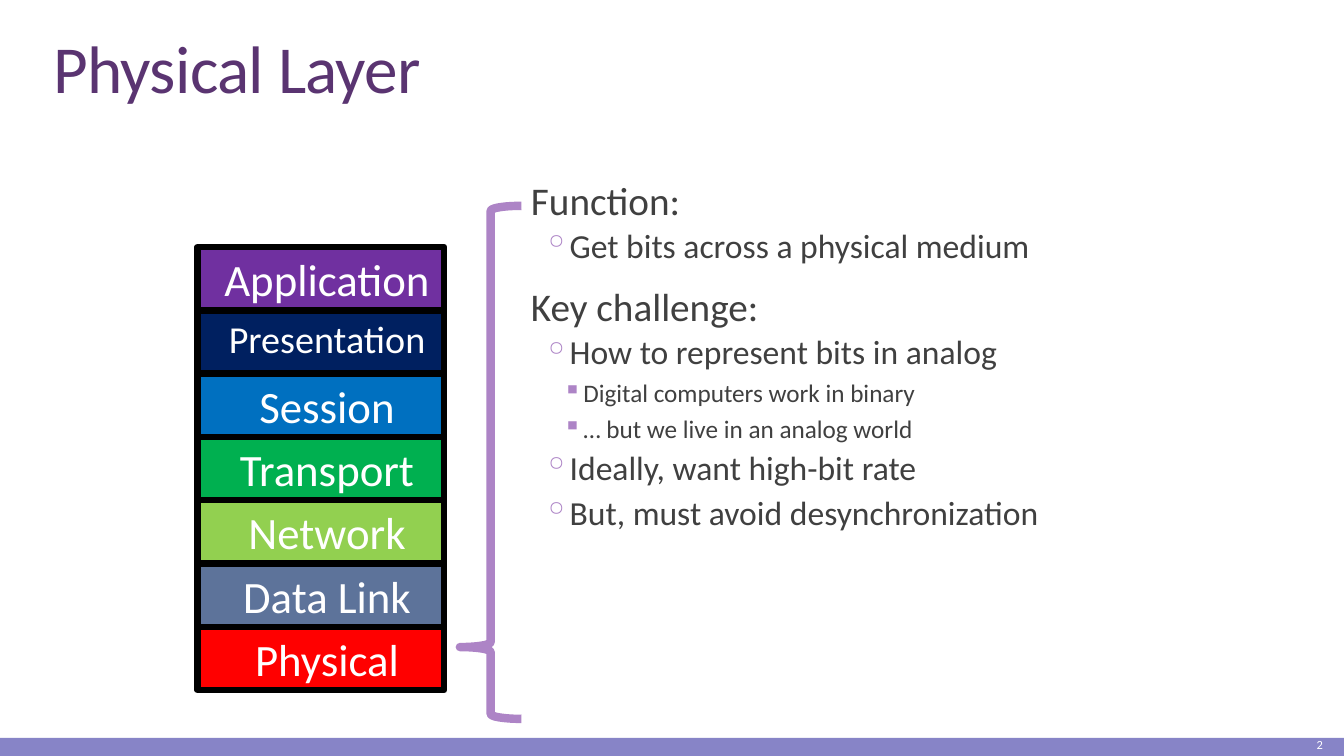
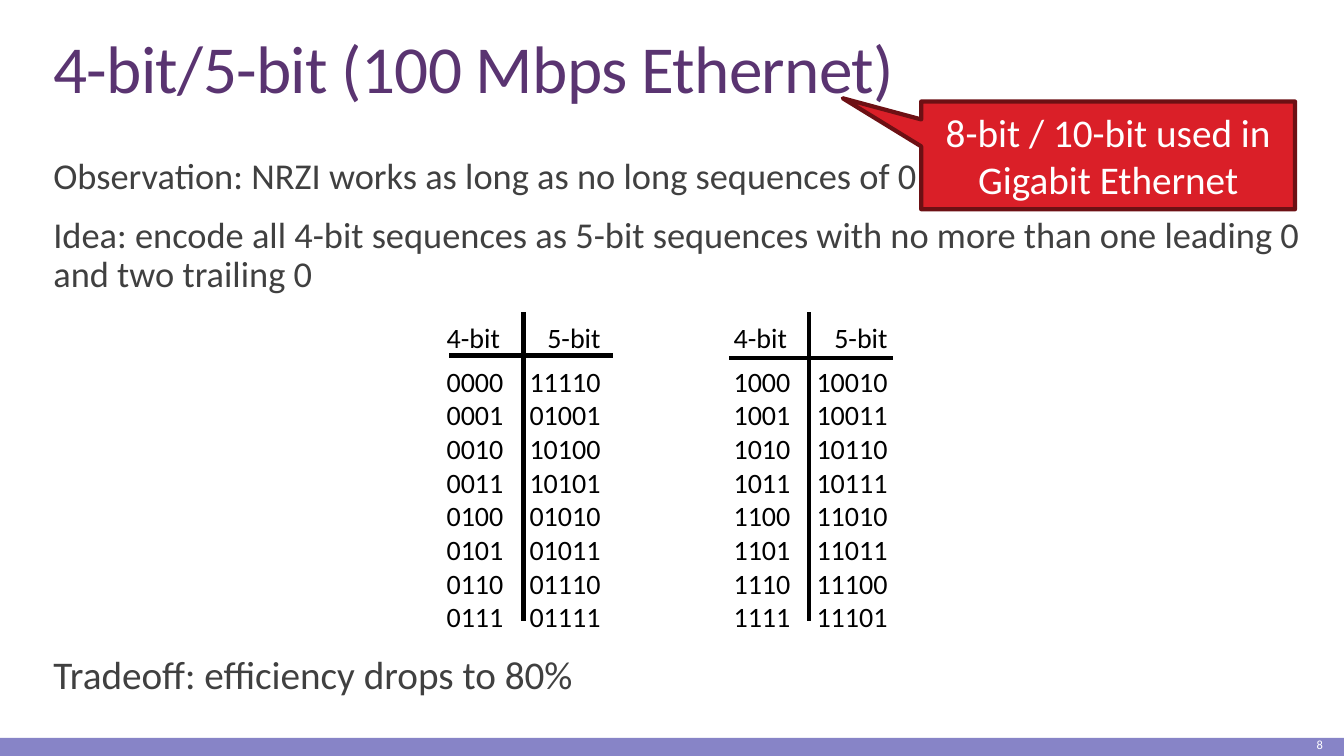
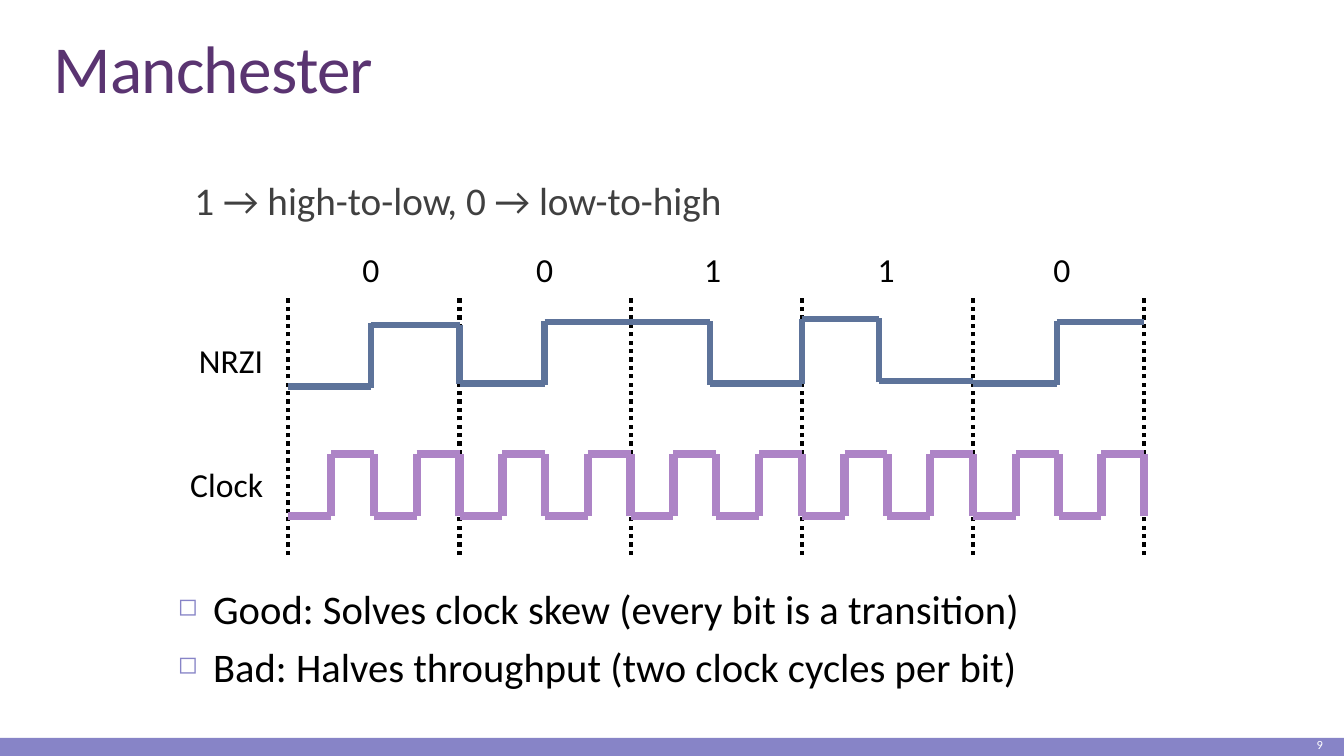
"""Build three slides on the physical layer, 4-bit/5-bit and Manchester coding."""
from collections import namedtuple

from lxml.etree import SubElement
from pptx import Presentation
from pptx.dml.color import RGBColor
from pptx.enum.dml import MSO_LINE as Dash
from pptx.enum.shapes import MSO_CONNECTOR as Wire, MSO_SHAPE as Form
from pptx.enum.text import MSO_ANCHOR as Anchor, MSO_AUTO_SIZE as Fit, PP_ALIGN as Align
from pptx.oxml.ns import qn
from pptx.util import Pt

rgb = RGBColor.from_string
FONT = "Calibri"
BLACK, WHITE, GRAY = "000000", "FFFFFF", "404040"
PLUM, LILAC, BAND, STEEL = "5A3471", "AD84C6", "8784C7", "5D739A"

Style = namedtuple(
    "Style", "size hue line before after left hang mark tint scale",
    defaults=(BLACK, 1, 0, 0, 0, 0, None, LILAC, 100))
HEAD = Style(28, GRAY, 0.9, 12, 2)
LEAD = HEAD._replace(size=26)
ITEM = Style(24, GRAY, 0.9, 2, 4, 23, 14.4, "◦")
SUB = ITEM._replace(size=18, left=37.4, mark="▪")
POINT = Style(29, before=7, left=25.2, hang=25.2, mark="◻", tint=BAND, scale=60)
TITLE = Style(48, PLUM, 0.85)
PAGE = Style(8.9, WHITE)
LABEL = Style(24)
CELL = Style(20)


def write(frame, rows, align=Align.LEFT):
    frame.word_wrap = True
    for i, (text, style) in enumerate(rows):
        para = frame.add_paragraph() if i else frame.paragraphs[0]
        para.text = text
        para.alignment = align
        para.line_spacing = style.line
        para.space_before = Pt(style.before if i else 0)
        para.space_after = Pt(style.after)
        if style.mark:
            prop = para._p.get_or_add_pPr()
            prop.set("marL", str(Pt(style.left)))
            prop.set("indent", str(-Pt(style.hang)))
            tint = SubElement(prop, qn("a:buClr"))
            SubElement(tint, qn("a:srgbClr"), val=style.tint)
            SubElement(prop, qn("a:buSzPct"), val=str(style.scale * 1000))
            SubElement(prop, qn("a:buChar"), char=style.mark)
        para.font.name = FONT
        para.font.size = Pt(style.size)
        para.font.color.rgb = rgb(style.hue)


def draw(slide, x1, y1, x2, y2, hue, width):
    wire = slide.shapes.add_connector(Wire.STRAIGHT, *map(Pt, (x1, y1, x2, y2)))
    wire.line.color.rgb = rgb(hue)
    wire.line.width = Pt(width)
    SubElement(wire._element.spPr, qn("a:effectLst"))
    return wire


deck = Presentation()
deck.slide_width, deck.slide_height = Pt(960), Pt(540)
plain = deck.slide_layouts[5]
slides = []
for name, page in (("Physical Layer", 2), ("4-bit/5-bit (100 Mbps Ethernet)", 8),
                   ("Manchester", 9)):
    slide = deck.slides.add_slide(plain)
    slides.append(slide)
    band = slide.shapes.add_shape(Form.RECTANGLE, 0, Pt(527), Pt(960), Pt(13))
    band.shadow.inherit = False
    band.fill.solid()
    band.fill.fore_color.rgb = rgb(BAND)
    band.line.fill.background()
    title = slide.shapes.title
    title.left, title.top, title.width, title.height = map(Pt, (31, 22.3, 910, 57.6))
    frame = title.text_frame
    frame.vertical_anchor = Anchor.BOTTOM
    frame.auto_size = Fit.NONE
    write(frame, [(name, TITLE)])
    frame.paragraphs[0].font._element.set("spc", "-50")
    frame = slide.shapes.add_textbox(*map(Pt, (849, 524, 103, 16))).text_frame
    frame.vertical_anchor = Anchor.MIDDLE
    write(frame, [(str(page), PAGE)], Align.RIGHT)
stack, code, wave = slides

body = stack.shapes.add_textbox(*map(Pt, (372.2, 126, 467, 402))).text_frame
write(body, [
    ("Function:", HEAD),
    ("Get bits across a physical medium", ITEM),
    ("Key challenge:", HEAD),
    ("How to represent bits in analog", ITEM),
    ("Digital computers work in binary", SUB),
    ("… but we live in an analog world", SUB),
    ("Ideally, want high-bit rate", ITEM),
    ("But, must avoid desynchronization", ITEM),
])
layers = [("Application", "7030A0", 32), ("Presentation", "002060", 27.2),
          ("Session", "0070C0", 32), ("Transport", "00B050", 32),
          ("Network", "92D050", 32), ("Data Link", STEEL, 32),
          ("Physical", "FF0000", 32)]
for i, (name, hue, size) in enumerate(layers):
    layer = stack.shapes.add_shape(
        Form.RECTANGLE, *map(Pt, (141, 176.5 + 45.2 * i, 176.4, 45.2)))
    layer.shadow.inherit = False
    layer.fill.solid()
    layer.fill.fore_color.rgb = rgb(hue)
    layer.line.color.rgb = rgb(BLACK)
    layer.line.width = Pt(4.5)
    frame = layer.text_frame
    frame.margin_left = Pt(16)
    frame.vertical_anchor = Anchor.TOP
    write(frame, [(name, Style(size, WHITE))], Align.CENTER)
brace = stack.shapes.add_shape(Form.LEFT_BRACE, *map(Pt, (328.5, 147, 44, 366.5)))
brace.shadow.inherit = False
brace.adjustments[0], brace.adjustments[1] = 0.08, 0.86
brace.fill.background()
brace.line.color.rgb = rgb(LILAC)
brace.line.width = Pt(6)

body = code.shapes.add_textbox(*map(Pt, (31, 109.5, 910, 110))).text_frame
write(body, [
    ("Observation: NRZI works as long as no long sequences of 0", LEAD),
    ("Idea: encode all 4-bit sequences as 5-bit sequences with no more than "
     "one leading 0 and two trailing 0", LEAD),
])
body = code.shapes.add_textbox(*map(Pt, (31, 465, 910, 42))).text_frame
write(body, [("Tradeoff: efficiency drops to 80%", HEAD)])
codes = ["11110", "01001", "10100", "10101", "01010", "01011", "01110", "01111",
         "10010", "10011", "10110", "10111", "11010", "11011", "11100", "11101"]
for start, left, split, edge, rule in ((0, 319, 374, 321, 254), (8, 524, 578, 521, 255.5)):
    pairs = [("4-bit", "5-bit")]
    pairs += [(f"{n:04b}", codes[n]) for n in range(start, start + 8)]
    table = code.shapes.add_table(
        9, 2, *map(Pt, (left, 229.7, 110, 223.4))).table
    table.first_row = table.horz_banding = False
    table.columns[0].width = Pt(split - left)
    table.columns[1].width = Pt(left + 110 - split)
    for r, pair in enumerate(pairs):
        table.rows[r].height = Pt(24 if r else 31.4)
        for c, text in enumerate(pair):
            cell = table.cell(r, c)
            cell.fill.background()
            cell.margin_left = cell.margin_right = 0
            cell.margin_top = cell.margin_bottom = 0
            write(cell.text_frame, [(text, CELL)], Align.RIGHT if c else Align.LEFT)
    draw(code, edge, rule, edge + 117, rule, BLACK, 3)
    draw(code, split, 223, split, 443.5, BLACK, 3)
call = code.shapes.add_shape(
    Form.RECTANGULAR_CALLOUT, *map(Pt, (658, 72.5, 267, 77)))
call.shadow.inherit = False
call.adjustments[0], call.adjustments[1] = -0.71, -0.53
call.fill.solid()
call.fill.fore_color.rgb = rgb("DA1F28")
call.line.color.rgb = rgb("6D1014")
call.line.width = Pt(3)
write(call.text_frame, [("8-bit / 10-bit used in Gigabit Ethernet", Style(28, WHITE))],
      Align.CENTER)

body = wave.shapes.add_textbox(*map(Pt, (131.8, 126, 696, 48))).text_frame
write(body, [("1 → high-to-low, 0 → low-to-high", HEAD)])
LEFT, STEP = 206, 122.25
for i in range(6):
    x = LEFT + STEP * i
    draw(wave, x, 396.5, x, 211, BLACK, 3).line.dash_style = Dash.ROUND_DOT
LOW, HIGH, HALF = 368.5, 324.5, STEP / 4
for i in range(10):
    x = LEFT + 2 * HALF * i
    path = [(x, LOW), (x + HALF, LOW), (x + HALF, HIGH),
            (x + 2 * HALF, HIGH), (x + 2 * HALF, LOW)]
    for a, b in zip(path, path[1:]):
        draw(wave, *a, *b, LILAC, 6)
bits = [("0", 265, 265, 276), ("0", 389, 389, 274), ("1", 509, 507, 274),
        ("1", 633, 628, 272), ("0", 758.5, 755, 274)]
last = None
for i, (bit, spot, mid, low) in enumerate(bits):
    x, high = LEFT + STEP * i, low - 44
    first, then = (high, low) if bit == "1" else (low, high)
    if i and abs(first - last) > 10:
        draw(wave, x, last, x, first, STEEL, 4.5)
    draw(wave, x, first, mid, first, STEEL, 4.5)
    draw(wave, mid, low + 1, mid, high - 1, STEEL, 4.5)
    draw(wave, mid, then, x + STEP, then, STEEL, 4.5)
    last = then
    frame = wave.shapes.add_textbox(*map(Pt, (spot - 14, 174.5, 28, 36))).text_frame
    write(frame, [(bit, LABEL)], Align.CENTER)
for name, top in (("Clock", 327.5), ("NRZI", 239)):
    frame = wave.shapes.add_textbox(*map(Pt, (115, top, 80, 36))).text_frame
    write(frame, [(name, LABEL)], Align.RIGHT)
body = wave.shapes.add_textbox(*map(Pt, (120, 413.5, 720, 106))).text_frame
write(body, [
    ("Good: Solves clock skew (every bit is a transition)", POINT),
    ("Bad: Halves throughput (two clock cycles per bit)", POINT),
])

deck.save("out.pptx")
